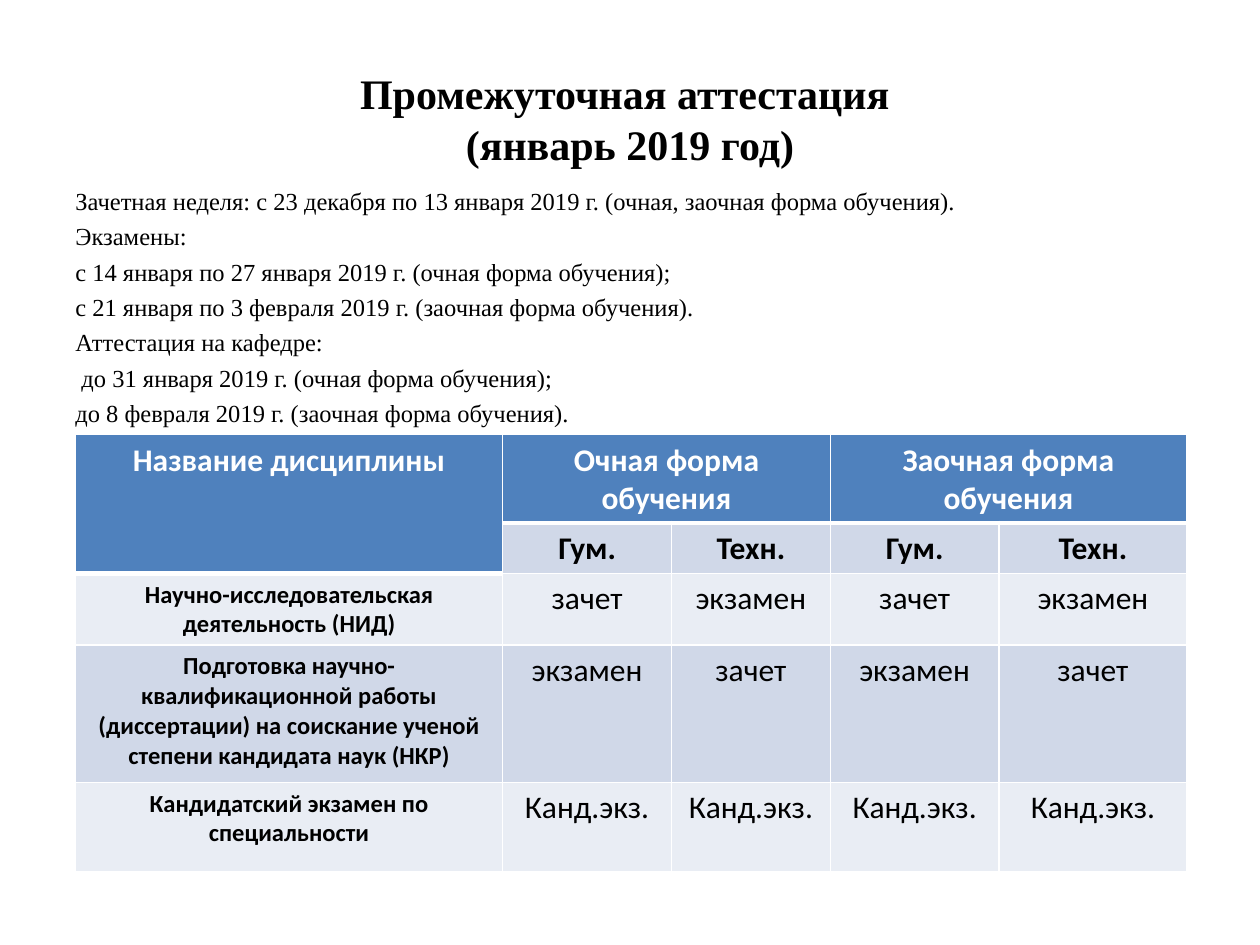
from lxml.etree import SubElement
from pptx import Presentation
from pptx.dml.color import RGBColor
from pptx.enum.text import MSO_ANCHOR as Anchor, PP_ALIGN as Align
from pptx.oxml.ns import qn
from pptx.util import Inches, Pt

COLORS = {"black": "000000", "white": "FFFFFF", "header": "4F81BD",
          "dark_band": "D0D8E8", "light_band": "E9EDF4"}
SERIF, SANS = "Times New Roman", "Calibri"
WIDTH, HEIGHT = 10, 7.5
COLUMN_WIDTHS = [3.39, 1.34, 1.26, 1.34, 1.49]
ROW_HEIGHTS = [0.7, 0.4, 0.57, 1.09, 0.71]
TITLE = "Промежуточная аттестация \v(январь 2019 год)"
SCHEDULE = [
    "Зачетная неделя: с 23 декабря по 13 января 2019 г. (очная, заочная форма обучения).",
    "Экзамены:",
    "с 14 января по 27 января 2019 г. (очная форма обучения);",
    "с 21 января по 3 февраля 2019 г. (заочная форма обучения).",
    "Аттестация на кафедре:",
    " до 31 января 2019 г. (очная форма обучения);",
    "до 8 февраля 2019 г. (заочная форма обучения).",
]
ROWS = [
    ["Название дисциплины", "Очная форма обучения", "", "Заочная форма обучения", ""],
    ["", "Гум.", "Техн.", "Гум.", "Техн."],
    ["Научно-исследовательская деятельность (НИД)"] + ["зачет", "экзамен"] * 2,
    ["Подготовка научно-квалификационной работы (диссертации) на соискание "
     "ученой степени кандидата наук (НКР)"] + ["экзамен", "зачет"] * 2,
    ["Кандидатский экзамен по специальности"] + ["Канд.экз."] * 4,
]
MERGES = [((0, 0), (1, 0)), ((0, 1), (0, 2)), ((0, 3), (0, 4))]


def write_text(paragraph, text, font=SERIF, size=14, bold=False,
               color="black", align=Align.LEFT, space_before=0):
    paragraph.text = text
    paragraph.alignment = align
    paragraph.space_before = Pt(space_before)
    for run in paragraph.runs:
        run.font.name = font
        run.font.size = Pt(size)
        run.font.bold = bold
        run.font.color.rgb = RGBColor.from_string(COLORS[color])


def add_text_box(slide, left, top, width, height, lines, anchor=Anchor.TOP, **text_format):
    shape = slide.shapes.add_textbox(
        Inches(left * WIDTH), Inches(top * HEIGHT),
        Inches(width * WIDTH), Inches(height * HEIGHT))
    frame = shape.text_frame
    frame.word_wrap = True
    frame.vertical_anchor = anchor
    for index, line in enumerate(lines):
        paragraph = frame.add_paragraph() if index else frame.paragraphs[0]
        write_text(paragraph, line, **text_format)


def set_borders(cell, widths):
    properties = cell._tc.get_or_add_tcPr()
    for side, width in widths.items():
        line = SubElement(properties, qn(f"a:ln{side}"), w=str(Pt(width)))
        fill = SubElement(line, qn("a:solidFill"))
        SubElement(fill, qn("a:srgbClr"), val=COLORS["white"])


def is_header(row, column):
    return row == 0 or (row, column) == (1, 0)


def format_cell(cell, row, column, text):
    header = is_header(row, column)
    below_header = row > 0 and is_header(row - 1, column)
    set_borders(cell, {"L": 1, "R": 1, "T": 3 if below_header else 1, "B": 3 if header else 1})
    band = "dark_band" if row % 2 else "light_band"
    cell.fill.solid()
    cell.fill.fore_color.rgb = RGBColor.from_string(COLORS["header" if header else band])
    if text:
        write_text(cell.text_frame.paragraphs[0], text, font=SANS,
                   size=14 if row > 1 and column == 0 else 18,
                   bold=row < 2 or column == 0,
                   color="white" if header else "black", align=Align.CENTER)


def add_discipline_table(slide, left, top):
    table = slide.shapes.add_table(
        len(ROWS), len(COLUMN_WIDTHS), Inches(left * WIDTH), Inches(top * HEIGHT),
        Inches(sum(COLUMN_WIDTHS)), Inches(sum(ROW_HEIGHTS))).table
    for column, width in zip(table.columns, COLUMN_WIDTHS):
        column.width = Inches(width)
    for row, height in zip(table.rows, ROW_HEIGHTS):
        row.height = Inches(height)
    for first, last in MERGES:
        table.cell(*first).merge(table.cell(*last))
    for row, texts in enumerate(ROWS):
        for column, text in enumerate(texts):
            format_cell(table.cell(row, column), row, column, text)


def main():
    presentation = Presentation()
    presentation.slide_width = Inches(WIDTH)
    presentation.slide_height = Inches(HEIGHT)
    slide = presentation.slides.add_slide(presentation.slide_layouts[6])
    add_text_box(slide, 0.05, 0.04, 0.9, 0.17, [TITLE], anchor=Anchor.MIDDLE,
                 size=24, bold=True, align=Align.CENTER)
    add_text_box(slide, 0.05, 0.19, 0.9, 0.71, SCHEDULE, space_before=3.4)
    add_discipline_table(slide, 0.06, 0.46)
    presentation.save("out.pptx")


if __name__ == "__main__":
    main()
